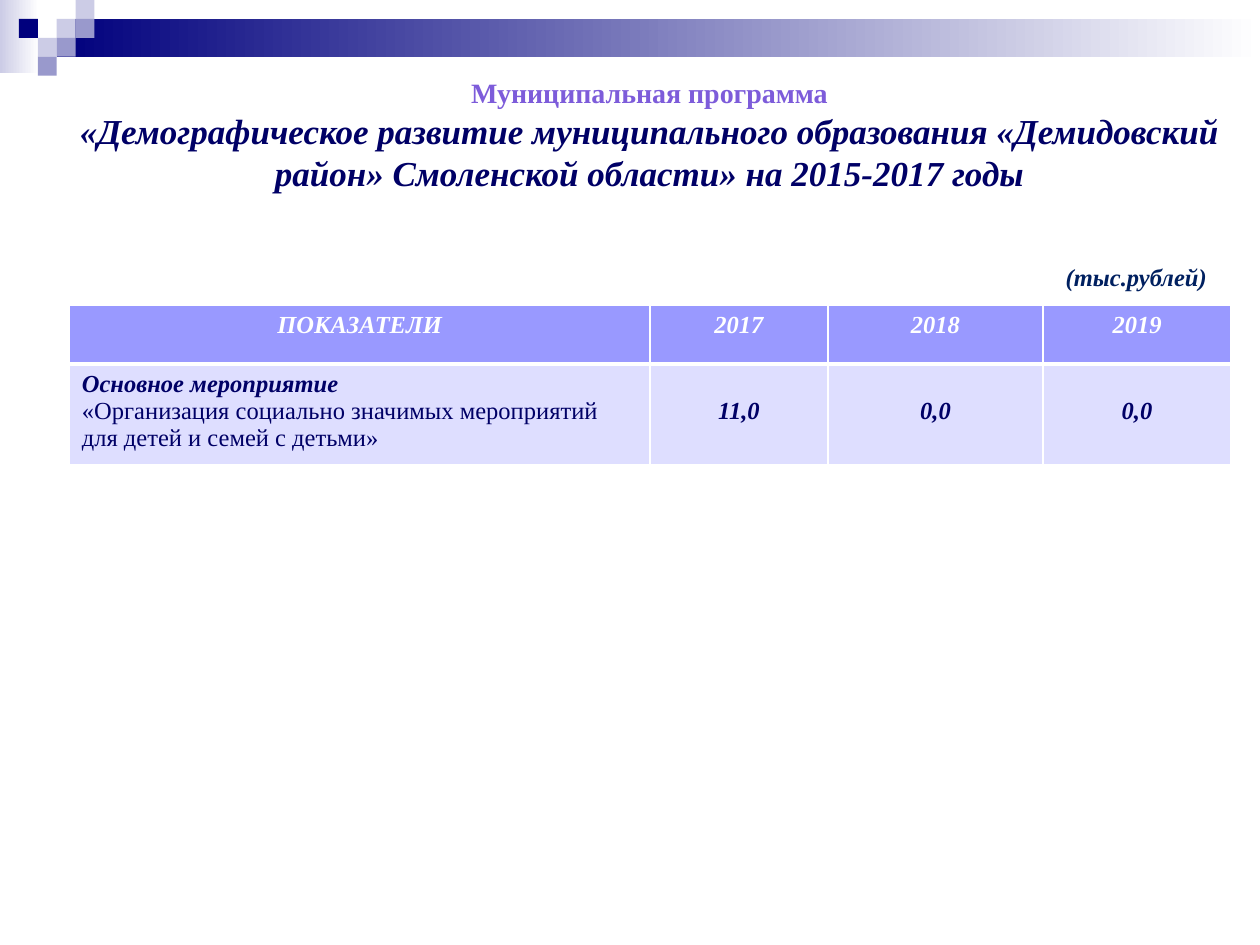
from dataclasses import dataclass

from lxml.etree import SubElement
from pptx import Presentation
from pptx.dml.color import RGBColor as Rgb
from pptx.enum.shapes import MSO_SHAPE as Shape
from pptx.enum.text import MSO_ANCHOR as Anchor, MSO_AUTO_SIZE as AutoSize, PP_ALIGN as Align
from pptx.oxml.ns import qn
from pptx.util import Inches, Pt


@dataclass(frozen=True)
class Theme:
    font: str = "Times New Roman"
    navy: str = "00007D"
    lilac: str = "CCCCE6"
    slate: str = "9999CC"
    white: str = "FFFFFF"
    violet: str = "7D5CDA"
    ink: str = "000066"
    unit: str = "002060"
    header: str = "9999FF"
    body: str = "DEDEFF"
    lead_size: int = 16
    title_size: int = 20
    text_size: int = 14


class SlideBuilder:
    def __init__(self, slide, theme):
        self.slide = slide
        self.theme = theme

    def style(self, paragraph, size, color, bold=True, italic=True, align=Align.CENTER):
        paragraph.alignment = align
        font = paragraph.font
        font.name, font.size = self.theme.font, Pt(size)
        font.bold, font.italic = bold, italic
        font.color.rgb = Rgb.from_string(color)

    def rectangle(self, left, top, width, height, color, fade_to=None):
        block = self.slide.shapes.add_shape(
            Shape.RECTANGLE, Inches(left), Inches(top), Inches(width), Inches(height))
        block.shadow.inherit = False
        block.line.fill.background()
        if fade_to:
            block.fill.gradient()
            block.fill.gradient_angle = 0
            for stop, position, shade in zip(block.fill.gradient_stops, (0, 1), (color, fade_to)):
                stop.position = position
                stop.color.rgb = Rgb.from_string(shade)
        else:
            block.fill.solid()
            block.fill.fore_color.rgb = Rgb.from_string(color)

    def title(self, left, top, width, height, lead, name):
        heading = self.slide.shapes.title
        heading.left, heading.top = Inches(left), Inches(top)
        heading.width, heading.height = Inches(width), Inches(height)
        frame = heading.text_frame
        frame.text = f"{lead}\n{name}"
        frame.vertical_anchor = Anchor.TOP
        frame.auto_size = AutoSize.SHAPE_TO_FIT_TEXT
        theme = self.theme
        self.style(frame.paragraphs[0], theme.lead_size, theme.violet, italic=False)
        self.style(frame.paragraphs[1], theme.title_size, theme.ink)

    def label(self, left, top, width, height, text):
        frame = self.slide.shapes.add_textbox(
            Inches(left), Inches(top), Inches(width), Inches(height)).text_frame
        frame.text = text
        frame.word_wrap = False
        frame.auto_size = AutoSize.SHAPE_TO_FIT_TEXT
        self.style(frame.paragraphs[0], self.theme.text_size, self.theme.unit, align=Align.LEFT)

    def cell(self, cell, text, fill, color, borders):
        cell.text = text
        cell.fill.solid()
        cell.fill.fore_color.rgb = Rgb.from_string(fill)
        properties = cell._tc.get_or_add_tcPr()
        for index, (side, points) in enumerate(borders.items()):
            line = SubElement(properties, qn(f"a:ln{side}"), w=str(Pt(points)))
            SubElement(SubElement(line, qn("a:solidFill")), qn("a:srgbClr"), val=self.theme.white)
            properties.insert(index, line)
        for paragraph in cell.text_frame.paragraphs:
            self.style(paragraph, self.theme.text_size, color)

    def table(self, left, top, widths, heights, rows):
        theme = self.theme
        grid = self.slide.shapes.add_table(
            len(rows), len(widths), Inches(left), Inches(top),
            Inches(sum(widths)), Inches(sum(heights))).table
        for column, width in zip(grid.columns, widths):
            column.width = Inches(width)
        for row, height in zip(grid.rows, heights):
            row.height = Inches(height)
        looks = [(theme.header, theme.white, {"L": 1, "R": 1, "T": 1, "B": 3}),
                 (theme.body, theme.ink, {"L": 1, "R": 1, "T": 3, "B": 1})]
        for row, texts, look in zip(grid.rows, rows, looks):
            for cell, text in zip(row.cells, texts):
                self.cell(cell, text, *look)

        activity, *amounts = grid.rows[1].cells
        caption, description = activity.text_frame.paragraphs
        self.style(caption, theme.text_size, theme.ink, align=Align.LEFT)
        self.style(description, theme.text_size, theme.ink, False, False, Align.LEFT)
        for amount in amounts:
            amount.vertical_anchor = Anchor.MIDDLE
            amount.margin_bottom = Inches(0.11)


def main():
    deck = Presentation()
    deck.slide_width, deck.slide_height = Inches(10), Inches(7.5)
    theme = Theme()
    page = SlideBuilder(deck.slides.add_slide(deck.slide_layouts[5]), theme)

    page.rectangle(0, 0, 0.31, 0.58, theme.lilac, theme.white)
    page.rectangle(0.45, 0.15, 9.55, 0.3, theme.navy, theme.white)
    tile = 0.15
    mosaic = {
        theme.lilac: [(3, 1), (4, 0), (2, 2)],
        theme.slate: [(4, 1), (3, 2), (2, 3)],
        theme.navy: [(1, 1)],
    }
    for color, places in mosaic.items():
        for column, row in places:
            page.rectangle(column * tile, row * tile, tile, tile, color)

    page.title(0.31, 0.55, 9.69, 1.04, "Муниципальная программа",
               "«Демографическое развитие муниципального образования "
               "«Демидовский район» Смоленской области» на 2015-2017 годы")
    page.table(0.55, 2.42, [4.61, 1.41, 1.71, 1.49], [0.47, 0.79], [
        ["ПОКАЗАТЕЛИ", "2017", "2018", "2019"],
        ["Основное мероприятие\n«Организация социально значимых мероприятий "
         "для детей и семей с детьми»", "11,0", "0,0", "0,0"],
    ])
    page.label(8.36, 2.03, 1.33, 0.34, "(тыс.рублей)")
    deck.save("out.pptx")


if __name__ == "__main__":
    main()
